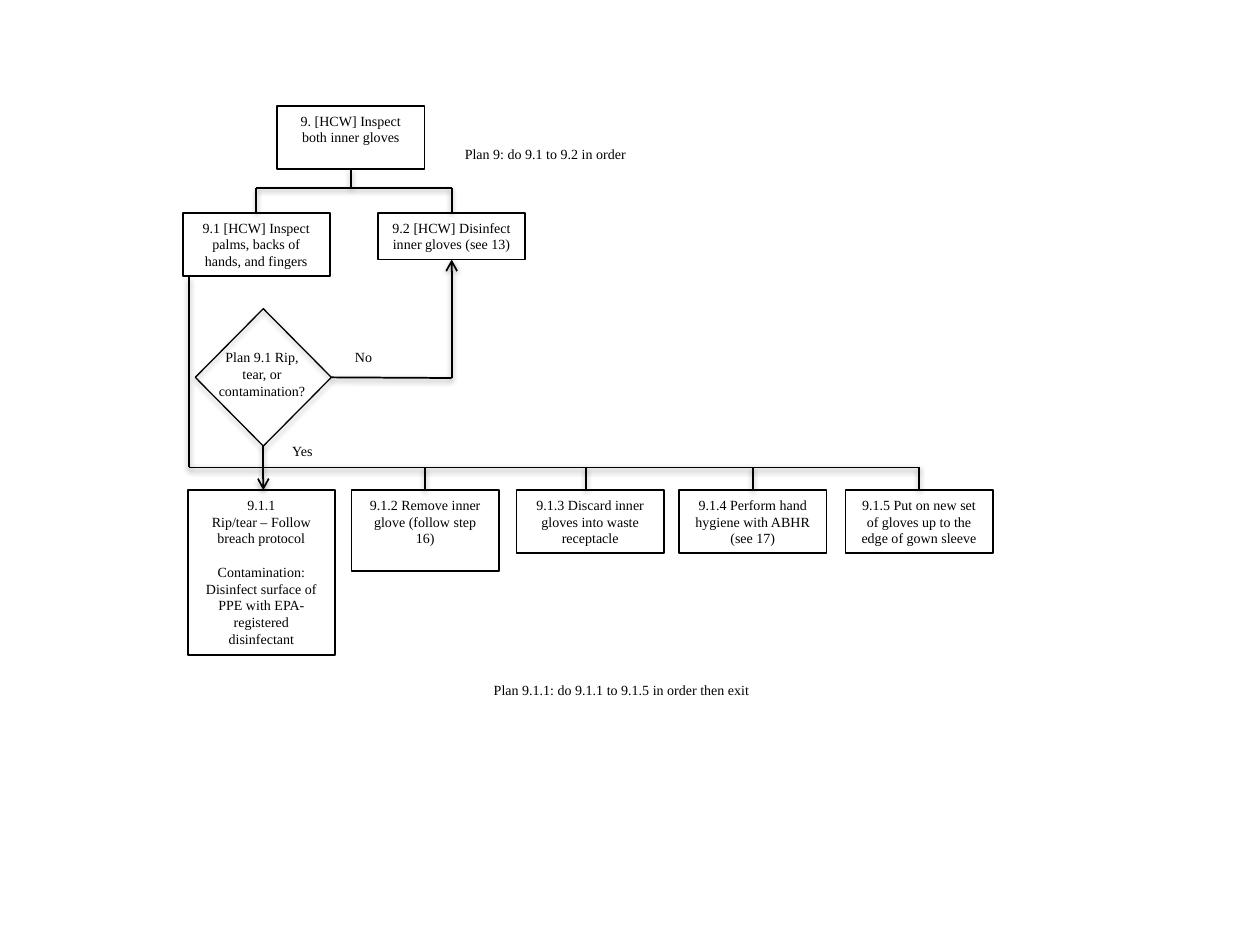
from typing import NamedTuple, Optional

from lxml.etree import SubElement
from pptx import Presentation
from pptx.dml.color import RGBColor
from pptx.enum.shapes import MSO_CONNECTOR, MSO_SHAPE
from pptx.enum.text import MSO_ANCHOR, MSO_AUTO_SIZE, PP_ALIGN
from pptx.oxml.ns import qn
from pptx.util import Inches, Pt

BLACK = RGBColor(0x00, 0x00, 0x00)
WHITE = RGBColor(0xFF, 0xFF, 0xFF)
FONT = {"name": "Times New Roman", "size": Pt(8)}
FRAME = {
    "word_wrap": True,
    "auto_size": MSO_AUTO_SIZE.SHAPE_TO_FIT_TEXT,
    "vertical_anchor": MSO_ANCHOR.TOP,
}
STEP_WIDTH = 1.17
STEP_TOP = 3.89
BRANCH_Y = 1.49
RAIL_Y = 3.71
RAIL_LEFT = 1.5
DECISION_Y = 3.0
TOP, BOTTOM, RIGHT = 0, 2, 3


class Step(NamedTuple):
    key: str
    left: float
    top: float
    height: float
    lines: tuple
    last_gap: float = 0


class Label(NamedTuple):
    left: float
    top: float
    width: float
    height: float
    text: str
    align: PP_ALIGN = PP_ALIGN.CENTER


class Joint(NamedTuple):
    """An end of a line; the place is replaced by a side of a shape if given."""
    x: float
    y: float
    shape: Optional[object] = None
    side: int = TOP


STEPS = [
    Step("9", 2.2, 0.84, 0.5, ("9. [HCW] Inspect both inner gloves",)),
    Step("9.1", 1.45, 1.69, 0.5, ("9.1 [HCW] Inspect palms, backs of hands, and fingers",)),
    Step("9.2", 3.0, 1.69, 0.37, ("9.2 [HCW] Disinfect inner gloves (see 13)",)),
    Step("9.1.1", 1.49, STEP_TOP, 1.31, (
        "9.1.1",
        "Rip/tear – Follow breach protocol",
        "Contamination: Disinfect surface of PPE with EPA-registered disinfectant",
    ), 9.5),
    Step("9.1.2", 2.79, STEP_TOP, 0.64, ("9.1.2 Remove inner glove (follow step 16)",)),
    Step("9.1.3", 4.1, STEP_TOP, 0.5, ("9.1.3 Discard inner gloves into waste receptacle",)),
    Step("9.1.4", 5.39, STEP_TOP, 0.5, ("9.1.4 Perform hand hygiene with ABHR", "(see 17)")),
    Step("9.1.5", 6.71, STEP_TOP, 0.5,
         ("9.1.5 Put on new set of gloves up to the edge of gown sleeve",)),
]
LABELS = [
    Label(1.59, 2.72, 0.98, 0.5, "Plan 9.1 Rip, tear, or contamination?"),
    Label(2.69, 2.72, 0.39, 0.23, "No"),
    Label(2.11, 3.46, 0.58, 0.24, "Yes"),
    Label(3.59, 1.11, 2.52, 0.24, "Plan 9: do 9.1 to 9.2 in order", PP_ALIGN.LEFT),
    Label(3.82, 5.36, 2.52, 0.24,
          "Plan 9.1.1: do 9.1.1 to 9.1.5 in order then exit", PP_ALIGN.LEFT),
]


def write(frame, lines: tuple, align: PP_ALIGN, last_gap: float = 0) -> None:
    for name, value in FRAME.items():
        setattr(frame, name, value)
    for index, line in enumerate(lines):
        para = frame.paragraphs[0] if index == 0 else frame.add_paragraph()
        para.alignment = align
        span = para.add_run()
        span.text = line
        for name, value in FONT.items():
            setattr(span.font, name, value)
        span.font.color.rgb = BLACK
    if last_gap:
        para.space_before = Pt(last_gap)


def set_line(shape, width: float) -> None:
    shape.line.color.rgb = BLACK
    shape.line.width = Pt(width)


def add_shadow(shape, opacity: int, distance: float) -> None:
    properties = shape.element.spPr
    for old in properties.findall(qn("a:effectLst")):
        properties.remove(old)
    effects = SubElement(properties, qn("a:effectLst"))
    shadow = SubElement(effects, qn("a:outerShdw"), blurRad=str(Pt(3.1)),
                        dist=str(Pt(distance)), dir="5400000", rotWithShape="0")
    color = SubElement(shadow, qn("a:srgbClr"), val=str(BLACK))
    SubElement(color, qn("a:alpha"), val=str(opacity * 1000))


def add_step(page, step: Step):
    box = page.shapes.add_shape(MSO_SHAPE.RECTANGLE, Inches(step.left), Inches(step.top),
                                Inches(STEP_WIDTH), Inches(step.height))
    box.shadow.inherit = False
    box.fill.solid()
    box.fill.fore_color.rgb = WHITE
    set_line(box, 1)
    write(box.text_frame, step.lines, PP_ALIGN.CENTER, step.last_gap)
    return box


def add_decision(page):
    diamond = page.shapes.add_shape(MSO_SHAPE.DIAMOND, Inches(1.55), Inches(2.45),
                                    Inches(1.08), Inches(1.09))
    diamond.fill.background()
    set_line(diamond, 0.75)
    add_shadow(diamond, 35, 1.8)
    return diamond


def add_label(page, label: Label) -> None:
    box = page.shapes.add_textbox(Inches(label.left), Inches(label.top),
                                  Inches(label.width), Inches(label.height))
    write(box.text_frame, (label.text,), label.align)


def add_link(page, start: Joint, end: Joint, arrow: bool = False) -> None:
    link = page.shapes.add_connector(MSO_CONNECTOR.STRAIGHT, Inches(start.x), Inches(start.y),
                                     Inches(end.x), Inches(end.y))
    if start.shape is not None:
        link.begin_connect(start.shape, start.side)
    if end.shape is not None:
        link.end_connect(end.shape, end.side)
    set_line(link, 1)
    if arrow:
        SubElement(link.line._get_or_add_ln(), qn("a:tailEnd"), type="arrow")
    add_shadow(link, 38, 1.6)


def add_links(page, boxes: dict, diamond) -> None:
    middle = {step.key: step.left + STEP_WIDTH / 2 for step in STEPS}
    left, right = middle["9.1"], middle["9.2"]
    rail_end = middle["9.1.5"]

    add_link(page, Joint(left, BRANCH_Y), Joint(right, BRANCH_Y))
    add_link(page, Joint(middle["9"], 1.34, boxes["9"], BOTTOM), Joint(middle["9"], BRANCH_Y))
    for key in ("9.1", "9.2"):
        add_link(page, Joint(middle[key], BRANCH_Y), Joint(middle[key], 1.69, boxes[key]))

    add_link(page, Joint(RAIL_LEFT, 2.2), Joint(RAIL_LEFT, RAIL_Y))
    add_link(page, Joint(RAIL_LEFT, RAIL_Y), Joint(rail_end, RAIL_Y))
    for key in ("9.1.2", "9.1.4", "9.1.5"):
        add_link(page, Joint(middle[key], RAIL_Y), Joint(middle[key], STEP_TOP, boxes[key]))
    add_link(page, Joint(4.65, RAIL_Y), Joint(4.65, STEP_TOP))

    add_link(page, Joint(2.63, DECISION_Y, diamond, RIGHT), Joint(right, DECISION_Y))
    add_link(page, Joint(right, DECISION_Y), Joint(right, 2.06, boxes["9.2"], BOTTOM), arrow=True)
    add_link(page, Joint(2.09, 3.54, diamond, BOTTOM), Joint(2.09, STEP_TOP), arrow=True)


def main() -> None:
    deck = Presentation()
    deck.slide_width, deck.slide_height = Inches(10), Inches(7.5)
    page = deck.slides.add_slide(deck.slide_layouts[6])
    boxes = {step.key: add_step(page, step) for step in STEPS}
    diamond = add_decision(page)
    add_links(page, boxes, diamond)
    for label in LABELS:
        add_label(page, label)
    deck.save("out.pptx")


if __name__ == "__main__":
    main()
